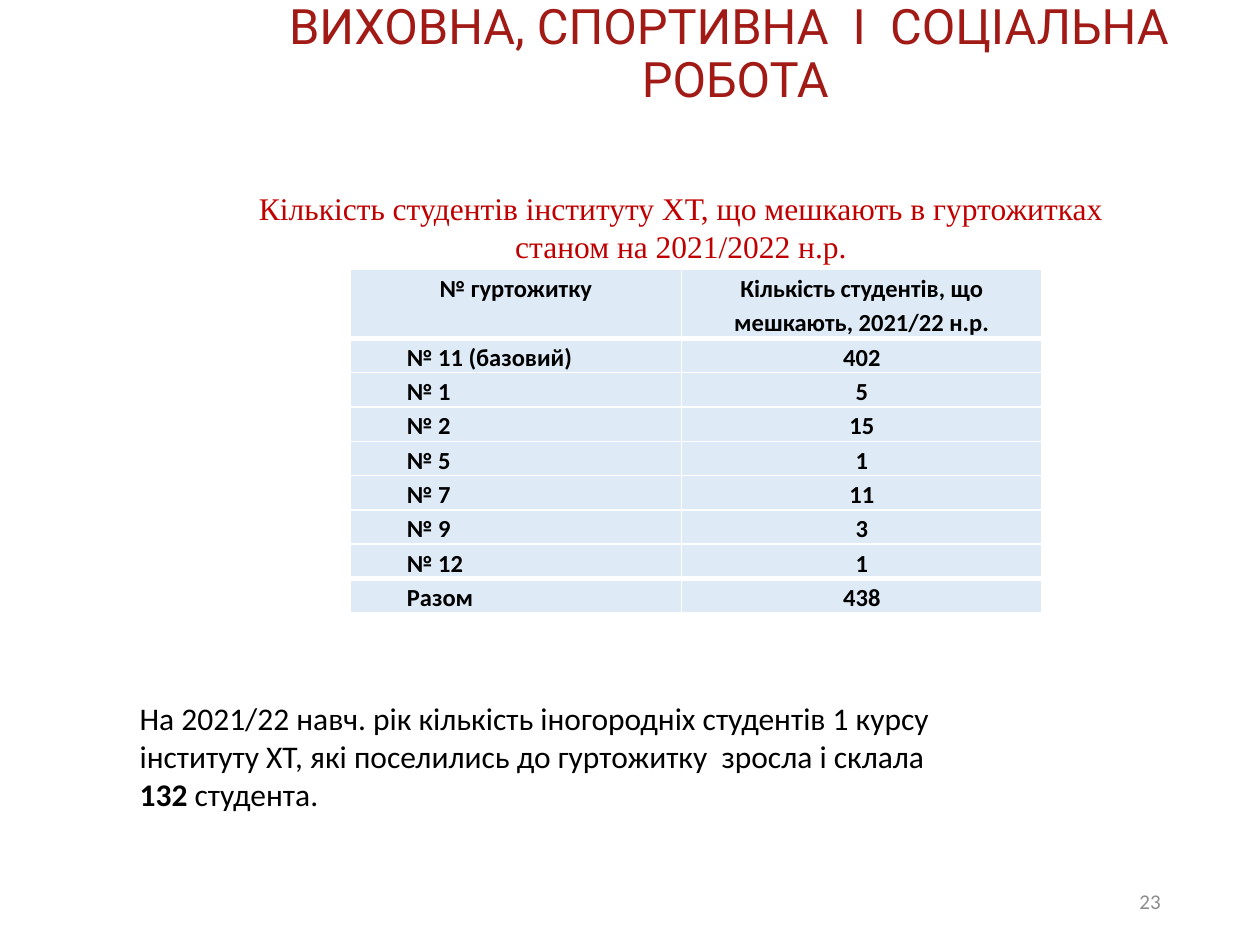
from dataclasses import dataclass

from lxml.etree import SubElement
from pptx import Presentation
from pptx.dml.color import RGBColor
from pptx.enum.text import MSO_ANCHOR, MSO_AUTO_SIZE, PP_ALIGN
from pptx.oxml.ns import qn
from pptx.util import Inches, Pt


@dataclass(frozen=True)
class TextStyle:
    """Font name, size in points, colour and weight."""
    font: str
    size: float
    color: str
    bold: bool = False


@dataclass(frozen=True)
class Theme:
    """Type styles and colours of the slide."""
    title: TextStyle = TextStyle("Roboto", 27.9, "A11A16")
    caption: TextStyle = TextStyle("Times New Roman", 18, "C00000")
    body: TextStyle = TextStyle("Calibri", 18, "000000")
    emphasis: TextStyle = TextStyle("Calibri", 18, "000000", True)
    cell: TextStyle = TextStyle("Calibri", 14, "000000", True)
    number: TextStyle = TextStyle("Calibri", 12, "8C8C8C")
    cell_fill: str = "DEEBF7"
    border: str = "FFFFFF"


THEME = Theme()
DORMITORIES = [
    ("№ гуртожитку", "Кількість студентів, що мешкають, 2021/22 н.р."),
    ("№ 11 (базовий)", "402"),
    ("№ 1", "5"),
    ("№ 2", "15"),
    ("№ 5", "1"),
    ("№ 7", "11"),
    ("№ 9", "3"),
    ("№ 12", "1"),
    ("Разом", "438"),
]


def style_run(run, style):
    """Apply a text style to a run."""
    run.font.name = style.font
    run.font.size = Pt(style.size)
    run.font.bold = style.bold
    run.font.color.rgb = RGBColor.from_string(style.color)


def style_paragraph(paragraph, style, alignment, line_spacing=1.0):
    """Format a paragraph and all of its runs."""
    paragraph.alignment = alignment
    paragraph.line_spacing = line_spacing
    for run in paragraph.runs:
        style_run(run, style)


def set_title(slide, text):
    """Fill and place the title placeholder."""
    title = slide.shapes.title
    title.left, title.top = Inches(1.67), Inches(0)
    title.width, title.height = Inches(8.33), Inches(1.12)
    frame = title.text_frame
    frame.text = text
    frame.word_wrap = True
    frame.auto_size = MSO_AUTO_SIZE.NONE
    frame.vertical_anchor = MSO_ANCHOR.MIDDLE
    frame.margin_bottom = Inches(0.29)
    style_paragraph(frame.paragraphs[0], THEME.title, PP_ALIGN.CENTER, 0.9)


def add_text(slide, box, text, style, alignment, anchor=MSO_ANCHOR.TOP):
    """Add a wrapped text box and return its text frame."""
    frame = slide.shapes.add_textbox(*map(Inches, box)).text_frame
    frame.word_wrap = True
    frame.vertical_anchor = anchor
    frame.text = text
    for paragraph in frame.paragraphs:
        style_paragraph(paragraph, style, alignment)
    return frame


def set_borders(cell, top, bottom):
    """Draw the four cell borders with the given top and bottom widths."""
    properties = cell._tc.get_or_add_tcPr()
    widths = {"a:lnL": 1, "a:lnR": 1, "a:lnT": top, "a:lnB": bottom}
    for position, (tag, width) in enumerate(widths.items()):
        line = SubElement(properties, qn(tag), w=str(Pt(width)))
        fill = SubElement(line, qn("a:solidFill"))
        SubElement(fill, qn("a:srgbClr"), val=THEME.border)
        properties.insert(position, line)


def format_cell(cell, text, alignment, indent):
    """Write and format one table cell."""
    cell.text_frame.text = text
    cell.margin_left = cell.margin_right = Inches(0.07)
    cell.margin_top = cell.margin_bottom = Inches(0)
    cell.fill.solid()
    cell.fill.fore_color.rgb = RGBColor.from_string(THEME.cell_fill)
    paragraph = cell.text_frame.paragraphs[0]
    if indent:
        paragraph._p.get_or_add_pPr().set("marL", str(Inches(indent)))
    style_paragraph(paragraph, THEME.cell, alignment, 1.15)


def add_dormitory_table(slide, rows):
    """Add the table with a header row and a total row."""
    box = map(Inches, (2.78, 2.14, 5.49, 2.69))
    table = slide.shapes.add_table(len(rows), 2, *box).table
    table.horz_banding = False
    for column, width in zip(table.columns, (2.63, 2.86)):
        column.width = Inches(width)
    last = len(rows) - 1
    for row_index, values in enumerate(rows):
        table.rows[row_index].height = Inches(0.26 if row_index else 0.54)
        top = 3 if row_index in (1, last) else 1
        bottom = 3 if row_index in (0, last - 1) else 1
        for column_index, value in enumerate(values):
            is_label = row_index > 0 and column_index == 0
            cell = table.cell(row_index, column_index)
            alignment = PP_ALIGN.LEFT if is_label else PP_ALIGN.CENTER
            format_cell(cell, value, alignment, 0.38 if is_label else 0)
            set_borders(cell, top, bottom)


def add_summary(slide):
    """Add the closing statement with its emphasised figure."""
    frame = add_text(
        slide, (1.01, 5.5, 6.52, 1.31),
        "На 2021/22 навч. рік кількість іногородніх студентів 1 курсу "
        "інституту ХТ, які поселились до гуртожитку  зросла і склала ",
        THEME.body, PP_ALIGN.LEFT)
    for text, style in (("132", THEME.emphasis), (" студента.", THEME.body)):
        run = frame.paragraphs[0].add_run()
        run.text = text
        style_run(run, style)


def main():
    """Build and save the slide."""
    presentation = Presentation()
    presentation.slide_width = Inches(10)
    presentation.slide_height = Inches(7.5)
    slide = presentation.slides.add_slide(presentation.slide_layouts[5])
    set_title(slide, "ВИХОВНА, СПОРТИВНА  І  СОЦІАЛЬНА  РОБОТА")
    add_dormitory_table(slide, DORMITORIES)
    add_text(
        slide, (1.19, 1.45, 8.43, 1.01),
        "Кількість студентів інституту ХТ, що мешкають в гуртожитках\n"
        "станом на 2021/2022 н.р.",
        THEME.caption, PP_ALIGN.CENTER)
    add_summary(slide)
    add_text(slide, (7.06, 6.95, 2.25, 0.4), "23", THEME.number,
             PP_ALIGN.RIGHT, MSO_ANCHOR.MIDDLE)
    presentation.save("out.pptx")


if __name__ == "__main__":
    main()
